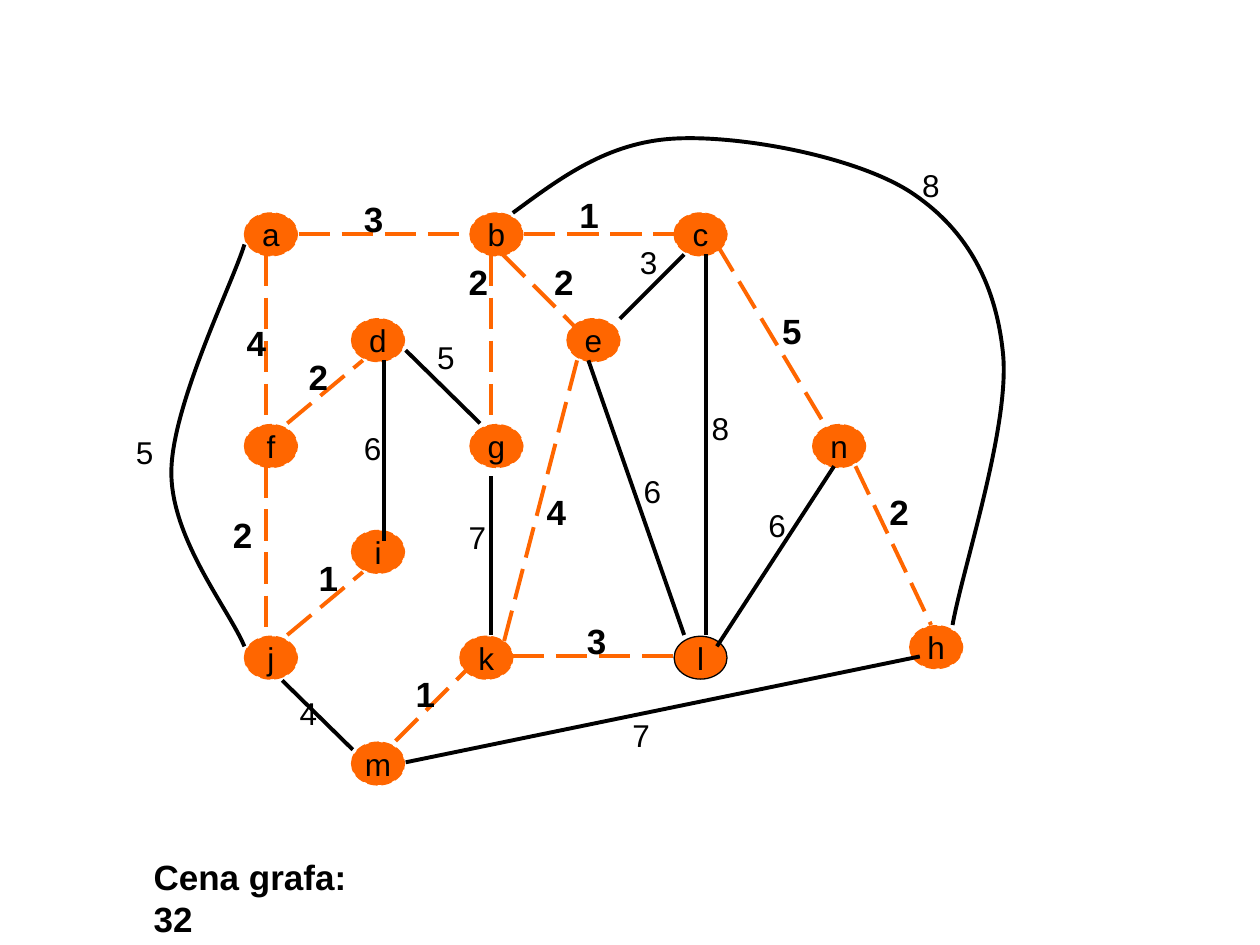
from dataclasses import dataclass

from lxml.etree import SubElement
from pptx import Presentation
from pptx.dml.color import RGBColor
from pptx.enum.dml import MSO_LINE
from pptx.enum.shapes import MSO_CONNECTOR, MSO_SHAPE
from pptx.enum.text import MSO_ANCHOR, PP_ALIGN
from pptx.oxml.ns import qn
from pptx.util import Inches, Pt


@dataclass(frozen=True)
class Theme:
    font: str = "Arial"
    ink: RGBColor = RGBColor(0x00, 0x00, 0x00)
    accent: RGBColor = RGBColor(0xFF, 0x66, 0x00)
    plain_size: float = 18
    tree_size: float = 20
    edge_width: float = 2.25
    outline_width: float = 0.75


class GraphPage:
    node_width, node_height = 0.42, 0.34

    def __init__(self, page, theme):
        self.page = page
        self.theme = theme

    def stroke(self, line, in_tree, width):
        line.color.rgb = self.theme.accent if in_tree else self.theme.ink
        line.width = Pt(width)
        if in_tree:
            line.dash_style = MSO_LINE.LONG_DASH

    def add_text(self, box, text, bold=False, wrap=False):
        frame = box.text_frame
        frame.word_wrap = wrap
        para = frame.paragraphs[0]
        span = para.add_run()
        span.text = text
        size = self.theme.tree_size if bold else self.theme.plain_size
        formats = {"name": self.theme.font, "size": Pt(size), "bold": bold}
        for name, value in formats.items():
            setattr(span.font, name, value)
        span.font.color.rgb = self.theme.ink
        return para

    def node(self, name, left, top, in_tree=True):
        oval = self.page.shapes.add_shape(
            MSO_SHAPE.OVAL, Inches(left), Inches(top),
            Inches(self.node_width), Inches(self.node_height))
        oval.shadow.inherit = False
        oval.fill.solid()
        oval.fill.fore_color.rgb = self.theme.accent
        self.stroke(oval.line, in_tree, self.theme.outline_width)
        oval.text_frame.vertical_anchor = MSO_ANCHOR.MIDDLE
        self.add_text(oval, name).alignment = PP_ALIGN.CENTER

    def edge(self, start, end, in_tree):
        line = self.page.shapes.add_connector(
            MSO_CONNECTOR.STRAIGHT, *map(Inches, start + end))
        self.stroke(line.line, in_tree, self.theme.edge_width)
        SubElement(line._element.spPr, qn("a:effectLst"))

    def curve(self, points):
        corners = [(Inches(x), Inches(y)) for x, y in points]
        builder = self.page.shapes.build_freeform(*corners[0])
        builder.add_line_segments(corners[1:], close=False)
        shape = builder.convert_to_shape()
        outline = next(shape._element.iter(qn("a:path")))
        steps = outline.findall(qn("a:lnTo"))
        for index in range(0, len(steps), 3):
            bezier = SubElement(outline, qn("a:cubicBezTo"))
            for step in steps[index:index + 3]:
                bezier.append(step[0])
                outline.remove(step)
        shape.shadow.inherit = False
        shape.fill.background()
        self.stroke(shape.line, False, self.theme.edge_width)

    def label(self, text, left, top, bold=False, width=0.35, wrap=False):
        box = self.page.shapes.add_textbox(
            Inches(left), Inches(top), Inches(width),
            Inches(0.43 if bold else 0.4))
        self.add_text(box, text, bold, wrap)


FIRST_ROW, ROW_STEP = 1.69, 0.84
NODES = {
    "a": (1.94, 0), "b": (3.73, 0), "c": (5.35, 0),
    "d": (2.79, 1), "e": (4.5, 1),
    "f": (1.94, 2), "g": (3.73, 2), "n": (6.45, 2),
    "i": (2.79, 3), "h": (7.22, 3.9),
    "j": (1.94, 4), "k": (3.65, 4), "l": (5.35, 4),
    "m": (2.79, 5),
}
TREE_EDGES = [
    ((2.37, 1.86), (3.73, 1.86)), ((4.16, 1.86), (5.35, 1.86)),
    ((6.79, 3.7), (7.39, 4.96)), ((3.14, 5.88), (3.73, 5.29)),
    ((2.11, 2.02), (2.11, 3.36)), ((2.11, 3.7), (2.11, 5.04)),
    ((2.28, 5.04), (2.88, 4.54)), ((2.28, 3.36), (2.88, 2.86)),
    ((3.99, 2.02), (4.58, 2.61)), ((3.9, 2.02), (3.9, 3.36)),
    ((5.69, 1.94), (6.54, 3.36)), ((4.07, 5.21), (5.35, 5.21)),
    ((4.58, 2.86), (3.99, 5.13)),
]
OTHER_EDGES = [
    ((2.24, 5.4), (2.8, 5.95)), ((5.43, 2.02), (4.92, 2.53)),
    ((5.6, 2.02), (5.6, 5.04)), ((6.62, 3.7), (5.69, 5.13)),
    ((3.05, 2.86), (3.05, 4.29)), ((3.22, 2.78), (3.81, 3.36)),
    ((3.9, 3.78), (3.9, 5.04)), ((4.67, 2.86), (5.43, 5.04)),
    ((3.22, 6.05), (7.3, 5.21)),
]
CURVES = [
    [(1.94, 1.94), (1.85, 2.24), (1.36, 3.22), (1.36, 3.75),
     (1.36, 4.28), (1.82, 4.84), (1.94, 5.13)],
    [(4.07, 1.69), (4.45, 1.41), (4.82, 1.13), (5.35, 1.1),
     (5.87, 1.07), (6.78, 1.24), (7.22, 1.52),
     (7.65, 1.8), (7.9, 2.22), (7.96, 2.8),
     (8.02, 3.37), (7.64, 4.51), (7.56, 4.96)],
]
TREE_WEIGHTS = [
    ("3", 2.79, 1.52), ("1", 4.5, 1.49), ("1", 3.2, 5.29),
    ("1", 2.43, 4.37), ("2", 4.3, 2.02), ("3", 4.56, 4.87),
    ("2", 2.35, 2.77), ("2", 1.75, 4.03), ("4", 1.86, 2.5),
    ("4", 4.24, 3.84), ("5", 6.11, 2.41), ("2", 6.96, 3.84),
    ("2", 3.62, 2.02),
]
OTHER_WEIGHTS = [
    ("8", 5.55, 3.2), ("5", 0.98, 3.39), ("8", 7.22, 1.27),
    ("7", 4.92, 5.63), ("4", 2.28, 5.46), ("6", 5.01, 3.7),
    ("6", 6, 3.97), ("7", 3.62, 4.06), ("5", 3.37, 2.63),
    ("6", 2.79, 3.36), ("3", 4.98, 1.88),
]


def main():
    deck = Presentation()
    deck.slide_width, deck.slide_height = Inches(10), Inches(7.5)
    graph = GraphPage(deck.slides.add_slide(deck.slide_layouts[6]), Theme())

    for name, (left, row) in NODES.items():
        graph.node(name, left, FIRST_ROW + ROW_STEP * row, name != "l")
    for in_tree, edges in ((True, TREE_EDGES), (False, OTHER_EDGES)):
        for start, end in edges:
            graph.edge(start, end, in_tree)
    for points in CURVES:
        graph.curve(points)
    for bold, weights in ((True, TREE_WEIGHTS), (False, OTHER_WEIGHTS)):
        for text, left, top in weights:
            graph.label(text, left, top, bold)
    graph.label("Cena grafa: 32", 1.12, 6.74, bold=True, width=2.05, wrap=True)

    deck.save("out.pptx")


if __name__ == "__main__":
    main()
